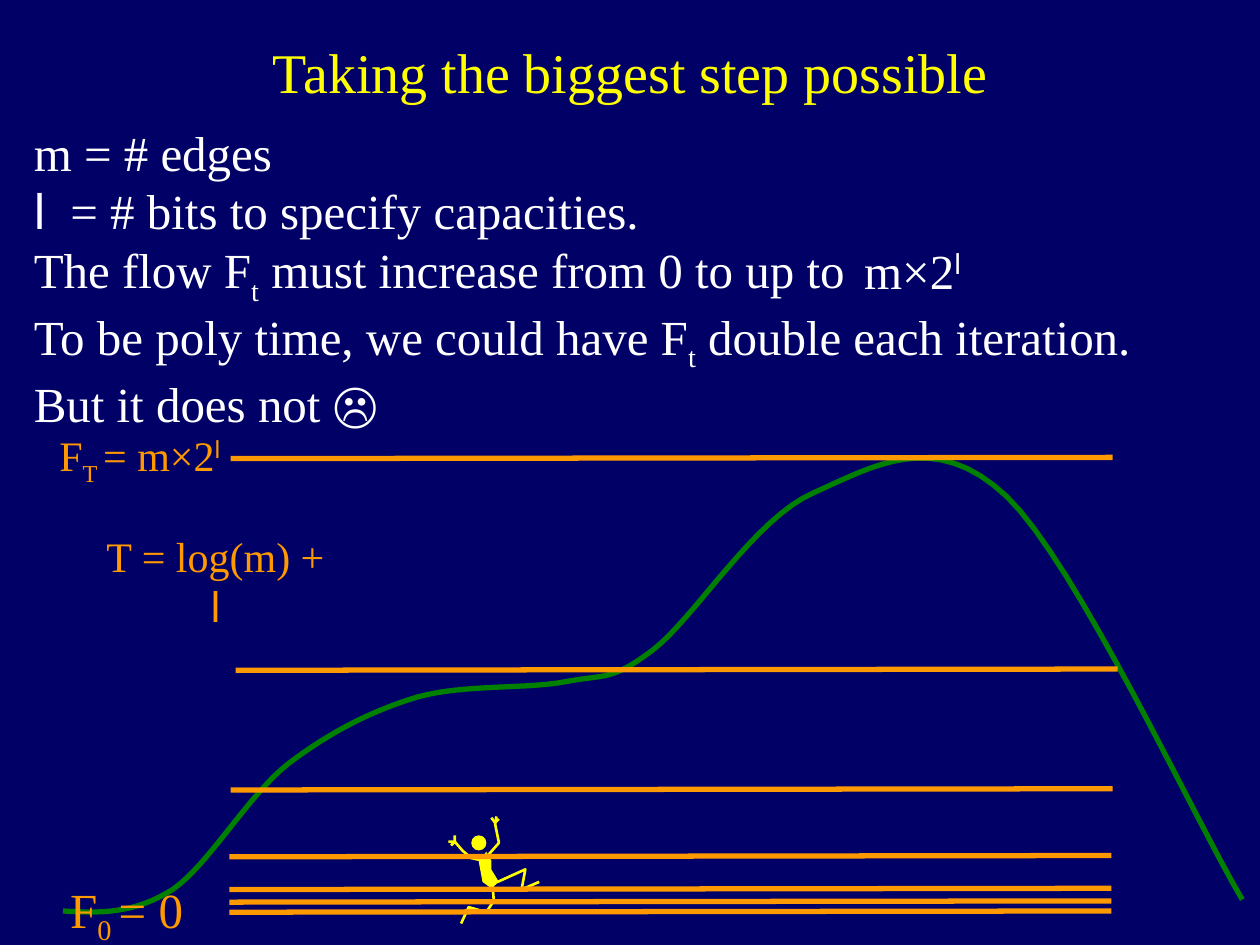
from dataclasses import dataclass
from typing import Optional

from lxml.etree import SubElement
from pptx import Presentation
from pptx.dml.color import RGBColor
from pptx.enum.shapes import MSO_CONNECTOR, MSO_SHAPE
from pptx.enum.text import MSO_AUTO_SIZE, PP_ALIGN
from pptx.oxml.ns import qn
from pptx.util import Inches, Pt

COLORS = {
    "background": "000066",
    "body": "FFFFFF",
    "title": "FFFF00",
    "climber": "FFFF00",
    "level": "FF9900",
    "hill": "008000",
}
SERIF, SANS = "Times New Roman", "Lato"
SUBSCRIPT, SUPERSCRIPT = -25000, 30000
LEVEL_WIDTH = 7

Point = tuple[float, float]


@dataclass(frozen=True)
class Piece:
    text: str
    font: str = SERIF
    baseline: int = 0


@dataclass(frozen=True)
class Label:
    left: float
    top: float
    width: float
    height: float
    size: int
    color: str
    lines: list[list[Piece]]
    align: PP_ALIGN = PP_ALIGN.CENTER
    wrap: bool = False


@dataclass(frozen=True)
class Level:
    top: float
    left: float = 1.82


POWER = Piece("l", SANS, SUPERSCRIPT)
TIME = Piece("t", baseline=SUBSCRIPT)

LABELS = [
    Label(0.17, 0.92, 9.33, 2.46, 28, "body", [
        [Piece("m = # edges")],
        [Piece("l  ", SANS), Piece("= # bits to specify capacities.")],
        [Piece("The flow F"), TIME, Piece(" must increase from 0 to up to")],
        [Piece("To be poly time, we could have F"), TIME, Piece(" double each iteration.")],
        [Piece("But it does not ☹")],
    ], PP_ALIGN.LEFT, True),
    Label(2.04, 0.25, 5.93, 0.64, 32, "title", [[Piece("Taking the biggest step possible")]]),
    Label(0.44, 6.93, 1.13, 0.57, 28, "level",
          [[Piece("F"), Piece("0 ", baseline=SUBSCRIPT), Piece("= 0")]]),
    Label(0.35, 3.36, 1.52, 0.5, 24, "level",
          [[Piece("F"), Piece("T ", baseline=SUBSCRIPT), Piece("= m×2"), POWER]]),
    Label(6.76, 1.86, 0.98, 0.57, 28, "body", [[Piece("m×2"), POWER]], PP_ALIGN.LEFT),
    Label(0.67, 4.16, 2.08, 0.5, 24, "level", [[Piece("T = log(m) + "), Piece("l", SANS)]]),
]

LEVELS = [
    Level(7.24), Level(7.16), Level(7.06), Level(6.8),
    Level(6.27, 1.83), Level(5.32, 1.87), Level(3.64, 1.83),
]

HILL = [
    (0.5, 7.23), (0.8, 7.25), (1.07, 7.25), (1.37, 7.06), (1.66, 6.86), (1.97, 6.31),
    (2.29, 6.06), (2.62, 5.81), (2.95, 5.64), (3.32, 5.53), (3.69, 5.43), (4.18, 5.47),
    (4.49, 5.41), (4.8, 5.35), (4.85, 5.41), (5.18, 5.16), (5.51, 4.91), (5.99, 4.11),
    (6.46, 3.91), (6.93, 3.7), (7.42, 3.4), (7.99, 3.94), (8.55, 4.48), (9.47, 6.48),
    (9.86, 7.14),
]

HEAD = (3.74, 6.63, 0.12, 0.12)
TORSO = [(3.8, 6.84), (3.86, 6.76), (3.9, 6.83), (3.9, 6.9), (3.96, 7), (3.9, 7.05), (3.83, 7)]
LIMBS = {
    "left arm": [(3.83, 6.83), (3.74, 6.81), (3.67, 6.75), (3.61, 6.68), (3.56, 6.68)],
    "left hand": [(3.58, 6.71), (3.61, 6.68), (3.61, 6.63)],
    "right arm": [(3.88, 6.78), (3.96, 6.69), (3.93, 6.54), (3.94, 6.48)],
    "right hand": [(3.9, 6.49), (3.93, 6.53), (3.96, 6.5)],
    "right leg": [(3.95, 7), (4.17, 6.9), (4.14, 7.06), (4.28, 7)],
    "left leg": [(3.91, 7.03), (3.92, 7.15), (3.86, 7.24), (3.72, 7.2), (3.66, 7.33)],
}


def rgb(name: str) -> RGBColor:
    return RGBColor.from_string(COLORS[name])


def smooth(knots: list[Point], steps: int = 16) -> list[Point]:
    curve = [knots[0]]
    for first in range(0, len(knots) - 1, 3):
        for t in (step / steps for step in range(1, steps + 1)):
            weights = ((1 - t) ** 3, 3 * t * (1 - t) ** 2, 3 * t * t * (1 - t), t ** 3)
            curve.append(tuple(sum(w * knot[axis] for w, knot in zip(weights, knots[first:first + 4]))
                               for axis in (0, 1)))
    return curve


def paint(shape, fill: Optional[str] = None, line: Optional[str] = None, weight: float = 3) -> None:
    shape.shadow.inherit = False
    for part, color in ((shape.fill, fill), (shape.line.fill, line)):
        if color:
            part.solid()
            part.fore_color.rgb = rgb(color)
        else:
            part.background()
    if line:
        shape.line.width = Pt(weight)


def draw_outline(slide, points: list[Point], closed: bool = False):
    start, *rest = [(Inches(x), Inches(y)) for x, y in points]
    builder = slide.shapes.build_freeform(*start)
    builder.add_line_segments(rest, close=closed)
    return builder.convert_to_shape()


def draw_climber(slide) -> None:
    paint(slide.shapes.add_shape(MSO_SHAPE.OVAL, *map(Inches, HEAD)), fill="climber")
    paint(draw_outline(slide, TORSO, closed=True), fill="climber")
    for limb in LIMBS.values():
        paint(draw_outline(slide, limb), line="climber", weight=1.5)


def draw_label(slide, label: Label) -> None:
    box = slide.shapes.add_textbox(*map(Inches, (label.left, label.top, label.width, label.height)))
    frame = box.text_frame
    for attribute, value in {"word_wrap": label.wrap, "auto_size": MSO_AUTO_SIZE.SHAPE_TO_FIT_TEXT}.items():
        setattr(frame, attribute, value)
    for index, pieces in enumerate(label.lines):
        paragraph = frame.add_paragraph() if index else frame.paragraphs[0]
        paragraph.alignment = label.align
        for piece in pieces:
            run = paragraph.add_run()
            run.text = piece.text
            for attribute, value in {"name": piece.font, "size": Pt(label.size)}.items():
                setattr(run.font, attribute, value)
            run.font.color.rgb = rgb(label.color)
            if piece.baseline:
                run.font._element.set("baseline", str(piece.baseline))


def draw_level(slide, level: Level) -> None:
    ends = (level.left, level.top, level.left + LEVEL_WIDTH, level.top - 0.01)
    rule = slide.shapes.add_connector(MSO_CONNECTOR.STRAIGHT, *map(Inches, ends))
    rule.line.color.rgb = rgb("level")
    rule.line.width = Pt(3)
    SubElement(rule._element.spPr, qn("a:effectLst"))


def main() -> None:
    deck = Presentation()
    deck.slide_width, deck.slide_height = Inches(10), Inches(7.5)
    slide = deck.slides.add_slide(deck.slide_layouts[6])
    slide.background.fill.solid()
    slide.background.fill.fore_color.rgb = rgb("background")
    paint(draw_outline(slide, smooth(HILL)), line="hill")
    draw_climber(slide)
    for label in LABELS:
        draw_label(slide, label)
    for level in LEVELS:
        draw_level(slide, level)
    deck.save("out.pptx")


if __name__ == "__main__":
    main()
